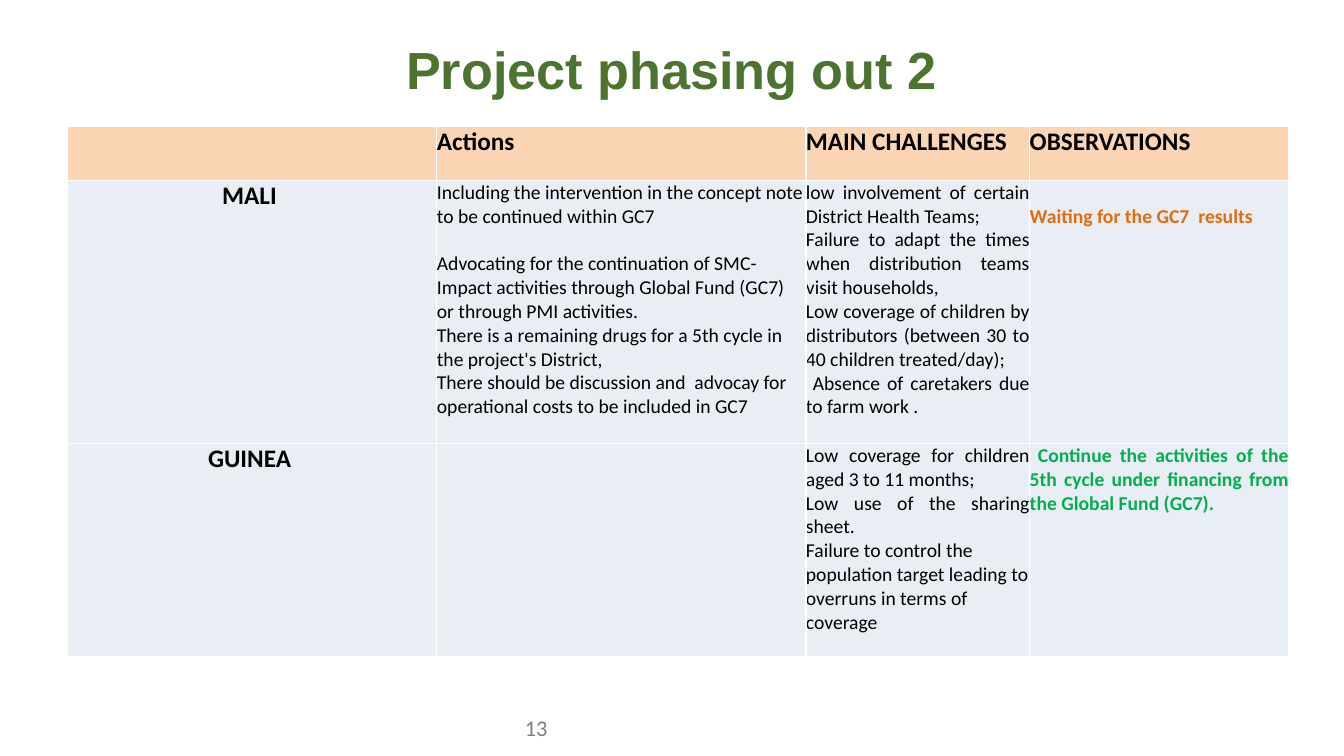
from dataclasses import dataclass

from lxml import etree
from pptx import Presentation
from pptx.dml.color import RGBColor
from pptx.enum import text
from pptx.oxml.ns import qn
from pptx.util import Cm, Pt


@dataclass(frozen=True)
class Theme:
    title_font: str = "Arial"
    body_font: str = "Calibri"
    title_size: float = 37.3
    heading_size: float = 18
    body_size: float = 14
    number_size: float = 16
    title: str = "4C7330"
    ink: str = "000000"
    waiting: str = "E46C0A"
    ongoing: str = "00B050"
    number: str = "7F7F7F"
    header_fill: str = "FCD5B5"
    body_fill: str = "E9EDF4"
    border: str = "FFFFFF"


THEME = Theme()
LEFT, CENTER, JUSTIFY = (text.PP_ALIGN.LEFT, text.PP_ALIGN.CENTER,
                         text.PP_ALIGN.JUSTIFY)

TITLE = "Project phasing out 2"
PAGE_NUMBER = "13"
HEADINGS = ["", "Actions", "MAIN CHALLENGES", "OBSERVATIONS"]
COUNTRIES = [
    {
        "name": "MALI ",
        "actions": [
            ("Including the intervention in the concept note to be continued within GC7", LEFT),
            ("Advocating for the continuation of SMC-Impact activities through "
             "Global Fund (GC7) or through PMI activities.", LEFT),
            ("There is a remaining drugs for a 5th cycle in the project's District,", LEFT),
            ("There should be discussion and  advocay for operational costs "
             "to be included in GC7", LEFT),
        ],
        "challenges": [
            ("low involvement of certain District Health Teams;", JUSTIFY),
            ("Failure to adapt the times when distribution teams visit households,", JUSTIFY),
            ("Low coverage of children by distributors "
             "(between 30 to 40 children treated/day);", JUSTIFY),
            (" Absence of caretakers due to farm work .", JUSTIFY),
        ],
        "observation": "Waiting for the GC7  results ",
        "color": THEME.waiting,
    },
    {
        "name": "GUINEA ",
        "actions": [],
        "challenges": [
            ("Low coverage for children aged 3 to 11 months;", JUSTIFY),
            ("Low use of the sharing sheet.", JUSTIFY),
            ("Failure to control the population target leading to overruns "
             "in terms of coverage", LEFT),
        ],
        "observation": " Continue the activities of the 5th cycle under financing "
                       "from the Global Fund (GC7).",
        "color": THEME.ongoing,
    },
]
COLUMN_WIDTHS = [9.3, 9.3, 5.64, 6.53]
ROW_HEIGHTS = [1.37, 6.63, 5.36]
BODY_LINE = 0.6  # height of one line of body text, in cm


def write(frame, lines, size, color, bold=False, font=THEME.body_font):
    """Put (wording, alignment) lines into a frame, one paragraph each."""
    frame.word_wrap = True
    frame.text = "\n".join(wording for wording, _ in lines)
    for paragraph, (_, alignment) in zip(frame.paragraphs, lines):
        paragraph.alignment = alignment
        for run in paragraph.runs:
            run.font.name, run.font.size, run.font.bold = font, Pt(size), bold
            run.font.color.rgb = RGBColor.from_string(color)


def add_label(slide, box, lines, *style, **options):
    label = slide.shapes.add_textbox(*map(Cm, box))
    label.text_frame.vertical_anchor = text.MSO_ANCHOR.MIDDLE
    write(label.text_frame, lines, *style, **options)


def dress_cell(cell, fill):
    """Fill a cell, drop its margins and give it thin borders."""
    cell.margin_left = cell.margin_right = cell.margin_top = cell.margin_bottom = 0
    cell.fill.solid()
    cell.fill.fore_color.rgb = RGBColor.from_string(fill)
    properties = cell._tc.get_or_add_tcPr()
    for position, side in enumerate(("a:lnL", "a:lnR", "a:lnT", "a:lnB")):
        line = etree.Element(qn(side), w=str(Pt(1)))
        solid = etree.SubElement(line, qn("a:solidFill"))
        etree.SubElement(solid, qn("a:srgbClr"), val=THEME.border)
        properties.insert(position, line)


def add_phasing_table(slide):
    table = slide.shapes.add_table(
        len(ROW_HEIGHTS), len(COLUMN_WIDTHS), Cm(1.71), Cm(3.18),
        Cm(sum(COLUMN_WIDTHS)), Cm(sum(ROW_HEIGHTS))).table
    for column, width in zip(table.columns, COLUMN_WIDTHS):
        column.width = Cm(width)
    for row, height in zip(table.rows, ROW_HEIGHTS):
        row.height = Cm(height)
    for index, row in enumerate(table.rows):
        for cell in row.cells:
            dress_cell(cell, THEME.body_fill if index else THEME.header_fill)

    for column, heading in enumerate(HEADINGS):
        write(table.cell(0, column).text_frame, [(heading, LEFT)],
              THEME.heading_size, THEME.ink, bold=True)
    for row, country in enumerate(COUNTRIES, start=1):
        name, actions, challenges, observation = (
            table.cell(row, column).text_frame for column in range(4))
        write(name, [(country["name"], CENTER)],
              THEME.heading_size, THEME.ink, bold=True)
        write(actions, country["actions"], THEME.body_size, THEME.ink)
        write(challenges, country["challenges"], THEME.body_size, THEME.ink)
        write(observation, [(country["observation"], JUSTIFY)],
              THEME.body_size, country["color"], bold=True)

    table.cell(1, 1).text_frame.paragraphs[1].space_before = Cm(BODY_LINE)
    table.cell(1, 3).margin_top = Cm(BODY_LINE)


def main():
    deck = Presentation()
    deck.slide_width, deck.slide_height = Cm(33.87), Cm(19.05)
    slide = deck.slides.add_slide(deck.slide_layouts[6])
    add_label(slide, (0.28, 0.74, 33.3, 1.96), [(TITLE, CENTER)],
              THEME.title_size, THEME.title, bold=True, font=THEME.title_font)
    add_phasing_table(slide)
    add_label(slide, (12.98, 17.83, 7.9, 1.02), [(PAGE_NUMBER, LEFT)],
              THEME.number_size, THEME.number)
    deck.save("out.pptx")


if __name__ == "__main__":
    main()
